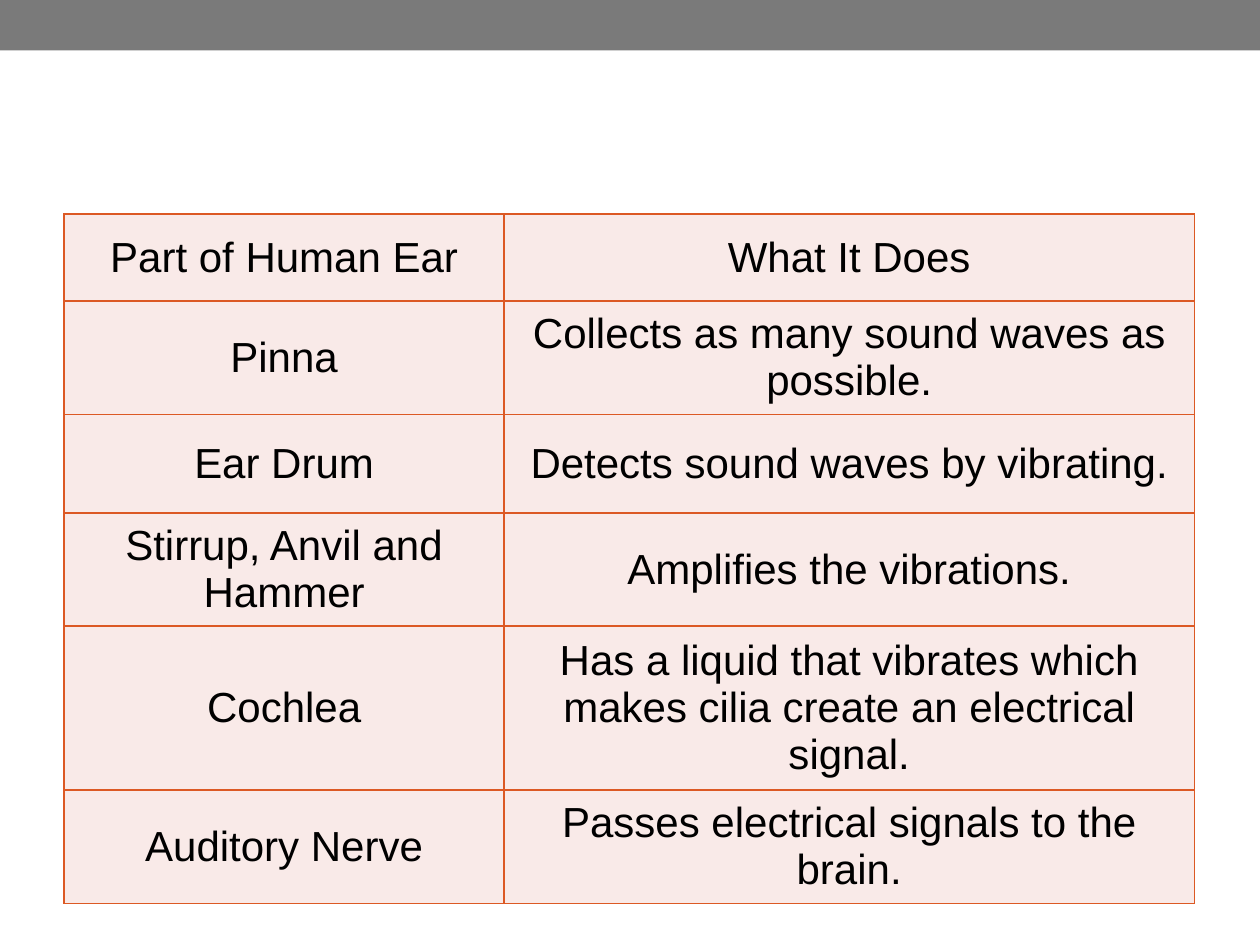
from lxml import etree
from pptx import Presentation, util as u
from pptx.dml.color import RGBColor
from pptx.enum import shapes, text
from pptx.oxml import ns

ROWS = [
    ("Part of Human Ear", "What It Does"),
    ("Pinna", "Collects as many sound waves as possible."),
    ("Ear Drum", "Detects sound waves by vibrating."),
    ("Stirrup, Anvil and Hammer", "Amplifies the vibrations."),
    ("Cochlea", "Has a liquid that vibrates which makes cilia create an electrical signal."),
    ("Auditory Nerve", "Passes electrical signals to the brain."),
]
WIDE, HIGH = 10, 7.5
COLS = [3.49, 5.48]
TALL = [0.69, 0.9, 0.78, 0.9, 1.3, 0.9]
LEFT, TOP, BAND = 0.51, 1.7, 0.4
HUES = {"band": "7A7A7A", "cell": "F9EAE8", "edge": "DC5924", "ink": "000000"}
FONT = {"name": "Arial", "size": u.Pt(24), "bold": False}


def hue(key):
    return RGBColor.from_string(HUES[key])


def paint(item, key):
    item.fill.solid()
    item.fill.fore_color.rgb = hue(key)


def edge(cell):
    props = cell._tc.get_or_add_tcPr()
    for spot, side in enumerate(("lnL", "lnR", "lnT", "lnB")):
        line = etree.Element(ns.qn("a:" + side), w=str(u.Pt(1)))
        fill = etree.SubElement(line, ns.qn("a:solidFill"))
        etree.SubElement(fill, ns.qn("a:srgbClr"), val=HUES["edge"])
        props.insert(spot, line)


def write(cell, words):
    cell.text = words
    cell.vertical_anchor = text.MSO_ANCHOR.MIDDLE
    para = cell.text_frame.paragraphs[0]
    para.alignment = text.PP_ALIGN.CENTER
    font = para.runs[0].font
    for key, value in FONT.items():
        setattr(font, key, value)
    font.color.rgb = hue("ink")
    paint(cell, "cell")
    edge(cell)


def main():
    deck = Presentation()
    deck.slide_width, deck.slide_height = u.Inches(WIDE), u.Inches(HIGH)
    page = deck.slides.add_slide(deck.slide_layouts[6])

    band = page.shapes.add_shape(
        shapes.MSO_SHAPE.RECTANGLE, 0, 0, u.Inches(WIDE), u.Inches(BAND))
    band.shadow.inherit = False
    band.line.fill.background()
    paint(band, "band")

    box = [u.Inches(n) for n in (LEFT, TOP, sum(COLS), sum(TALL))]
    grid = page.shapes.add_table(len(ROWS), len(COLS), *box).table
    for col, width in zip(grid.columns, COLS):
        col.width = u.Inches(width)
    for row, height, words in zip(grid.rows, TALL, ROWS):
        row.height = u.Inches(height)
        for cell, word in zip(row.cells, words):
            write(cell, word)

    deck.save("out.pptx")


if __name__ == "__main__":
    main()
